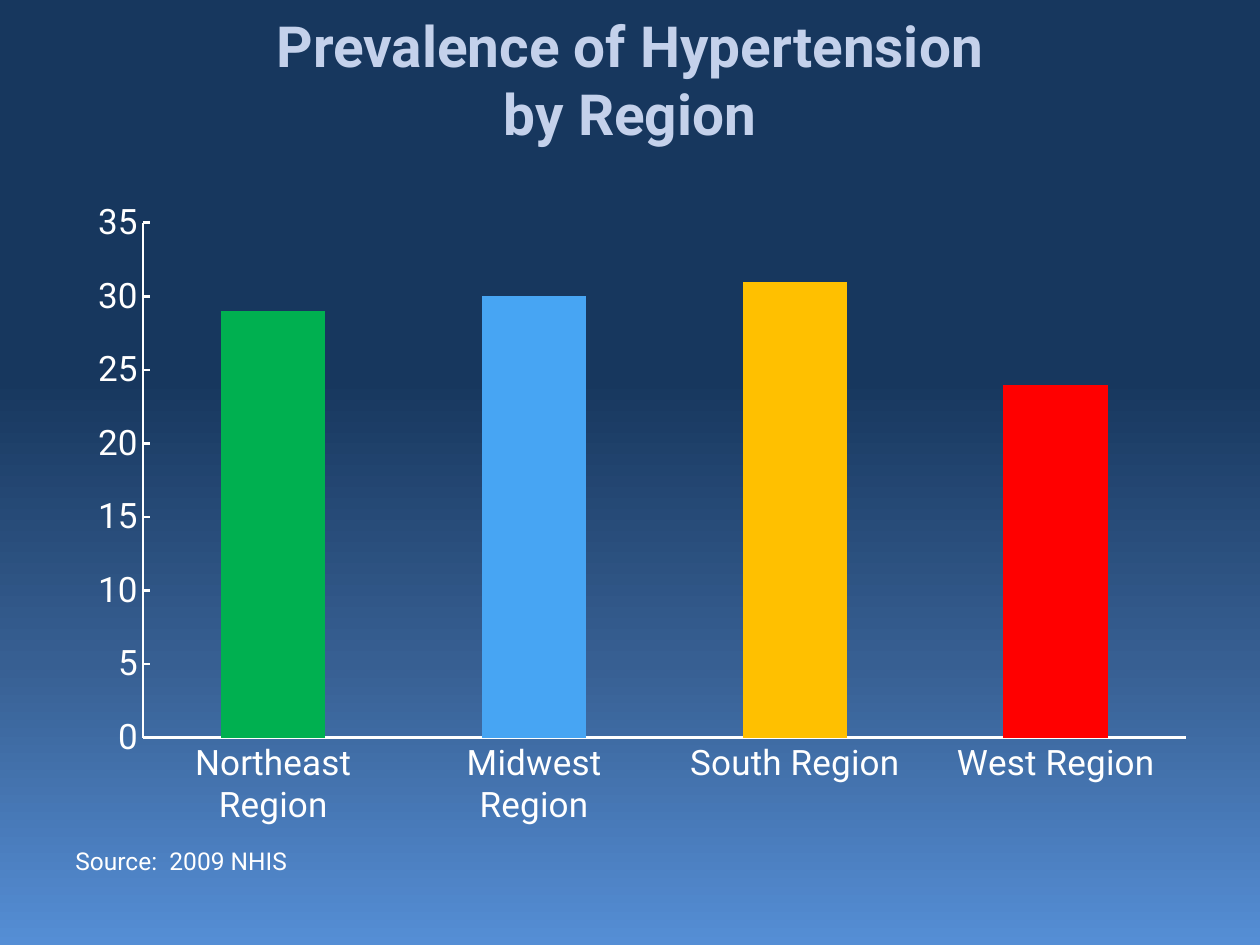
from copy import deepcopy
from dataclasses import dataclass

from lxml.etree import SubElement
from pptx import Presentation
from pptx.chart.data import CategoryChartData
from pptx.dml.color import RGBColor
from pptx.enum.chart import XL_CHART_TYPE as ChartType, XL_TICK_MARK as Tick
from pptx.enum.text import MSO_ANCHOR as Anchor, PP_ALIGN as Align
from pptx.oxml.ns import qn
from pptx.util import Pt

PX = 914400 // 126
FONT = "Roboto"

WHITE = RGBColor(0xFF, 0xFF, 0xFF)
LAVENDER = RGBColor(0xC4, 0xD1, 0xEB)
GREEN = RGBColor(0x00, 0xB0, 0x50)
SKY = RGBColor(0x47, 0xA5, 0xF3)
AMBER = RGBColor(0xFF, 0xC0, 0x00)
RED = RGBColor(0xFF, 0x00, 0x00)
NAVY = RGBColor(0x17, 0x37, 0x5E)
STEEL = RGBColor(0x37, 0x5F, 0x92)
AZURE = RGBColor(0x55, 0x8E, 0xD5)


@dataclass(frozen=True)
class Box:
    left: int
    top: int
    width: int
    height: int

    def emu(self) -> tuple:
        return tuple(n * PX for n in (self.left, self.top, self.width, self.height))


@dataclass(frozen=True)
class Region:
    name: str
    percent: int
    color: RGBColor


@dataclass(frozen=True)
class Stop:
    position: float
    color: RGBColor


TITLE_BOX = Box(63, 0, 1134, 158)
SOURCE_BOX = Box(63, 840, 1134, 32)
CHART_BOX = Box(76, 189, 1134, 651)
PLOT_BOX = Box(143, 223, 1043, 515)

REGIONS = [
    Region("Northeast Region", 29, GREEN),
    Region("Midwest Region", 30, SKY),
    Region("South Region", 31, AMBER),
    Region("West Region", 24, RED),
]
STOPS = [Stop(0, NAVY), Stop(0.4, NAVY), Stop(0.7, STEEL), Stop(1, AZURE)]


def style_font(font, size: float, color: RGBColor, bold: bool = False) -> None:
    font.name = FONT
    font.size = Pt(size)
    font.bold = bold
    font.color.rgb = color


def paint_background(slide, stops: list) -> None:
    fill = slide.background.fill
    fill.gradient()
    fill.gradient_angle = 270
    stop_list = slide.background._cSld.find(".//" + qn("a:gsLst"))
    while len(stop_list) < len(stops):
        stop_list.append(deepcopy(stop_list[0]))
    for element, gradient_stop, stop in zip(stop_list, fill.gradient_stops, stops):
        gradient_stop.color.rgb = stop.color
        element.set("pos", str(round(stop.position * 100000)))


def place(shape, box: Box) -> None:
    shape.left, shape.top, shape.width, shape.height = box.emu()


def write_title(slide, lines: list) -> None:
    title = slide.shapes.title
    place(title, TITLE_BOX)
    title.text_frame.vertical_anchor = Anchor.MIDDLE
    para = title.text_frame.paragraphs[0]
    para.alignment = Align.CENTER
    for index, line in enumerate(lines):
        if index:
            para.add_line_break()
        span = para.add_run()
        span.text = line
        style_font(span.font, 32.4, LAVENDER, bold=True)


def write_source(slide, text: str) -> None:
    frame = slide.shapes.add_textbox(*SOURCE_BOX.emu()).text_frame
    frame.word_wrap = True
    span = frame.paragraphs[0].add_run()
    span.text = text
    style_font(span.font, 14, WHITE)


def style_axis(axis, tick: Tick) -> None:
    axis.has_major_gridlines = False
    axis.major_tick_mark = tick
    axis.minor_tick_mark = Tick.NONE
    axis.format.line.color.rgb = WHITE
    axis.format.line.width = Pt(1.5)
    style_font(axis.tick_labels.font, 20, WHITE)


def fix_plot_area(chart, outer: Box, inner: Box) -> None:
    plot_area = chart._chartSpace.chart.plotArea
    for old in plot_area.findall(qn("c:layout")):
        plot_area.remove(old)
    layout = SubElement(plot_area, qn("c:layout"))
    plot_area.insert(0, layout)
    manual = SubElement(layout, qn("c:manualLayout"))
    settings = {
        "layoutTarget": "inner",
        "xMode": "edge",
        "yMode": "edge",
        "x": round((inner.left - outer.left) / outer.width, 3),
        "y": round((inner.top - outer.top) / outer.height, 3),
        "w": round(inner.width / outer.width, 3),
        "h": round(inner.height / outer.height, 3),
    }
    for name, value in settings.items():
        SubElement(manual, qn(f"c:{name}")).set("val", str(value))


def draw_chart(slide, regions: list) -> None:
    data = CategoryChartData()
    data.categories = [region.name for region in regions]
    data.add_series("Series 1", [region.percent for region in regions])
    chart = slide.shapes.add_chart(
        ChartType.COLUMN_CLUSTERED, *CHART_BOX.emu(), data
    ).chart
    chart.has_title = False
    chart.has_legend = False
    style_font(chart.font, 18, WHITE)
    chart.font.name = "Calibri"

    # Axes
    style_axis(chart.category_axis, Tick.NONE)
    style_axis(chart.value_axis, Tick.INSIDE)
    chart.value_axis.minimum_scale = 0
    chart.value_axis.maximum_scale = 35
    chart.value_axis.major_unit = 5

    # Columns, one colour per region
    plot = chart.plots[0]
    plot.gap_width = 150
    plot.vary_by_categories = False
    series = plot.series[0]
    series.format.fill.solid()
    series.format.fill.fore_color.rgb = SKY
    for index, region in enumerate(regions):
        if region.color != SKY:
            fill = series.points[index].format.fill
            fill.solid()
            fill.fore_color.rgb = region.color
    fix_plot_area(chart, CHART_BOX, PLOT_BOX)


def main() -> None:
    deck = Presentation()
    deck.slide_width, deck.slide_height = 1260 * PX, 945 * PX
    page = deck.slides.add_slide(deck.slide_layouts[5])
    paint_background(page, STOPS)
    write_title(page, ["Prevalence of Hypertension", "by Region"])
    write_source(page, "Source:  2009 NHIS")
    draw_chart(page, REGIONS)
    deck.save("out.pptx")


if __name__ == "__main__":
    main()
